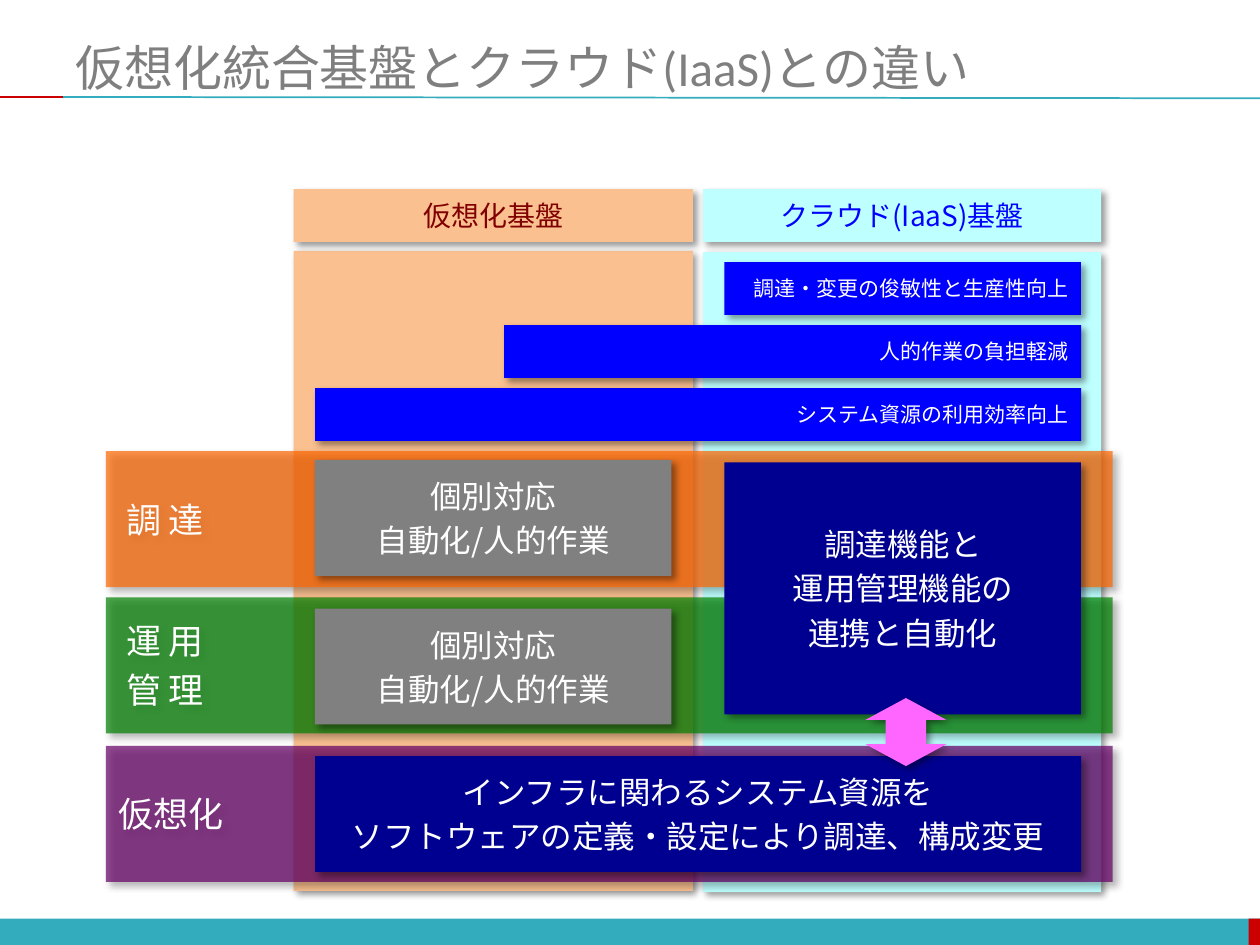
import pptx
import pptx.util
import pptx.dml.color
import pptx.enum.shapes
import pptx.enum.text
import pptx.oxml
import pptx.oxml.ns
from lxml import etree

Inches = pptx.util.Inches
Pt = pptx.util.Pt
RGB = pptx.dml.color.RGBColor.from_string
qn = pptx.oxml.ns.qn
SHAPE = pptx.enum.shapes.MSO_SHAPE
ALIGN = pptx.enum.text.PP_ALIGN

COLORS = {
    "teal": "33ACBD", "red": "CC0000", "title": "7F7F7F", "white": "FFFFFF",
    "peach": "FAC090", "aqua": "BEFFFF", "maroon": "800000", "blue": "0000FF",
    "navy": "000090", "gray": "808080", "purple": "660066", "green": "008000",
    "orange": "FF6600", "pink": "FF66FF",
}
JP = "Noto Sans CJK JP"
SHADOW = (
    '<a:effectLst xmlns:a="http://schemas.openxmlformats.org/drawingml/2006/main">'
    '<a:outerShdw blurRad="50800" dist="38100" dir="2700000" algn="tl" rotWithShape="0">'
    '<a:srgbClr val="000000"><a:alpha val="40000"/></a:srgbClr>'
    '</a:outerShdw></a:effectLst>'
)


def add_box(box, fill, shadow=True, alpha=None, kind=SHAPE.RECTANGLE):
    sp = s.shapes.add_shape(kind, *[Inches(v) for v in box])
    sp.fill.solid()
    sp.fill.fore_color.rgb = RGB(COLORS[fill])
    sp.line.fill.background()
    if shadow:
        sp._element.spPr.append(pptx.oxml.parse_xml(SHADOW))
    else:
        sp.shadow.inherit = False
    if alpha:
        clr = sp._element.spPr.find(qn("a:solidFill")).find(qn("a:srgbClr"))
        etree.SubElement(clr, qn("a:alpha")).set("val", str(alpha * 1000))
    return sp


def add_text(sp, lines, size, color, align=ALIGN.CENTER, left=0.1, name=JP):
    tf = sp.text_frame
    frame = {
        "word_wrap": True, "vertical_anchor": pptx.enum.text.MSO_ANCHOR.MIDDLE,
        "margin_left": Inches(left), "margin_right": Inches(0.1),
        "margin_top": Inches(0.05), "margin_bottom": Inches(0.05),
    }
    for key, value in frame.items():
        setattr(tf, key, value)
    for i, line in enumerate(lines):
        p = tf.paragraphs[0] if i == 0 else tf.add_paragraph()
        p.alignment = align
        if i:
            p.space_before = Pt(size * 0.2)
        r = p.add_run()
        r.text = line
        for key, value in {"size": Pt(size), "name": name}.items():
            setattr(r.font, key, value)
        r.font.color.rgb = RGB(COLORS[color])
        etree.SubElement(r._r.get_or_add_rPr(), qn("a:ea")).set("typeface", JP)


prs = pptx.Presentation()
prs.slide_width, prs.slide_height = Inches(10), Inches(7.5)
s = prs.slides.add_slide(prs.slide_layouts[6])

add_box((0, 7.29, 10, 0.22), "teal", shadow=False)
add_box((9.91, 7.29, 0.1, 0.22), "red", shadow=False)
for x1, x2, y2, color in [(0.5, 10, 0.78, "teal"), (0, 0.5, 0.77, "red")]:
    line = s.shapes.add_connector(
        pptx.enum.shapes.MSO_CONNECTOR.STRAIGHT,
        Inches(x1), Inches(0.77), Inches(x2), Inches(y2))
    line.line.color.rgb = RGB(COLORS[color])
    line.line.width = Pt(1)
    etree.SubElement(line._element.spPr, qn("a:effectLst"))

title = s.shapes.add_textbox(Inches(0.5), Inches(0.3), Inches(9.5), Inches(0.46))
add_text(title, ["仮想化統合基盤とクラウド(IaaS)との違い"], 28, "title", ALIGN.LEFT, name="Calibri")

columns = [
    (2.33, 1.99, 3.17, "peach", "仮想化基盤", "maroon"),
    (5.58, 2, 3.16, "aqua", "クラウド(IaaS)基盤", "blue"),
]
for x, y, w, fill, text, color in columns:
    add_box((x, y, w, 5.08), fill)

layers = [
    (5.92, "purple", ["仮想化"], 0.1),
    (4.74, "green", ["運 用", "管 理"], 0.16),
    (3.58, "orange", ["調 達"], 0.16),
]
for y, fill, lines, left in layers:
    sp = add_box((0.84, y, 7.99, 1.08), fill, alpha=70)
    add_text(sp, lines, 20, "white", ALIGN.LEFT, left)

manual = ["個別対応", "自動化/人的作業"]
functions = [
    ((2.5, 6, 6.08, 0.92), "navy", ["インフラに関わるシステム資源を", "ソフトウェアの定義・設定により調達、構成変更"]),
    ((5.75, 3.67, 2.83, 2), "navy", ["調達機能と", "運用管理機能の", "連携と自動化"]),
    ((2.5, 3.65, 2.83, 0.92), "gray", manual),
    ((2.5, 4.83, 2.83, 0.92), "gray", manual),
]
for box, fill, lines in functions:
    add_text(add_box(box, fill), lines, 18, "white")

benefits = [
    (2.5, "システム資源の利用効率向上"),
    (4, "人的作業の負担軽減"),
    (5.75, "調達・変更の俊敏性と生産性向上"),
]
for i, (x, text) in enumerate(benefits):
    sp = add_box((x, 3.08 - 0.5 * i, 8.58 - x, 0.42), "blue")
    add_text(sp, [text], 12, "white", ALIGN.RIGHT)

for x, y, w, fill, text, color in columns:
    add_text(add_box((x, 1.5, w, 0.42), fill), [text], 16, color)

arrow = add_box((6.87, 5.54, 0.64, 0.54), "pink", kind=SHAPE.UP_DOWN_ARROW)
guides = arrow._element.spPr.find(qn("a:prstGeom")).find(qn("a:avLst"))
for guide in list(guides):
    guides.remove(guide)
for name, value in {"adj1": 50000, "adj2": 32000}.items():
    gd = etree.SubElement(guides, qn("a:gd"))
    gd.set("name", name)
    gd.set("fmla", f"val {value}")

prs.save("out.pptx")
